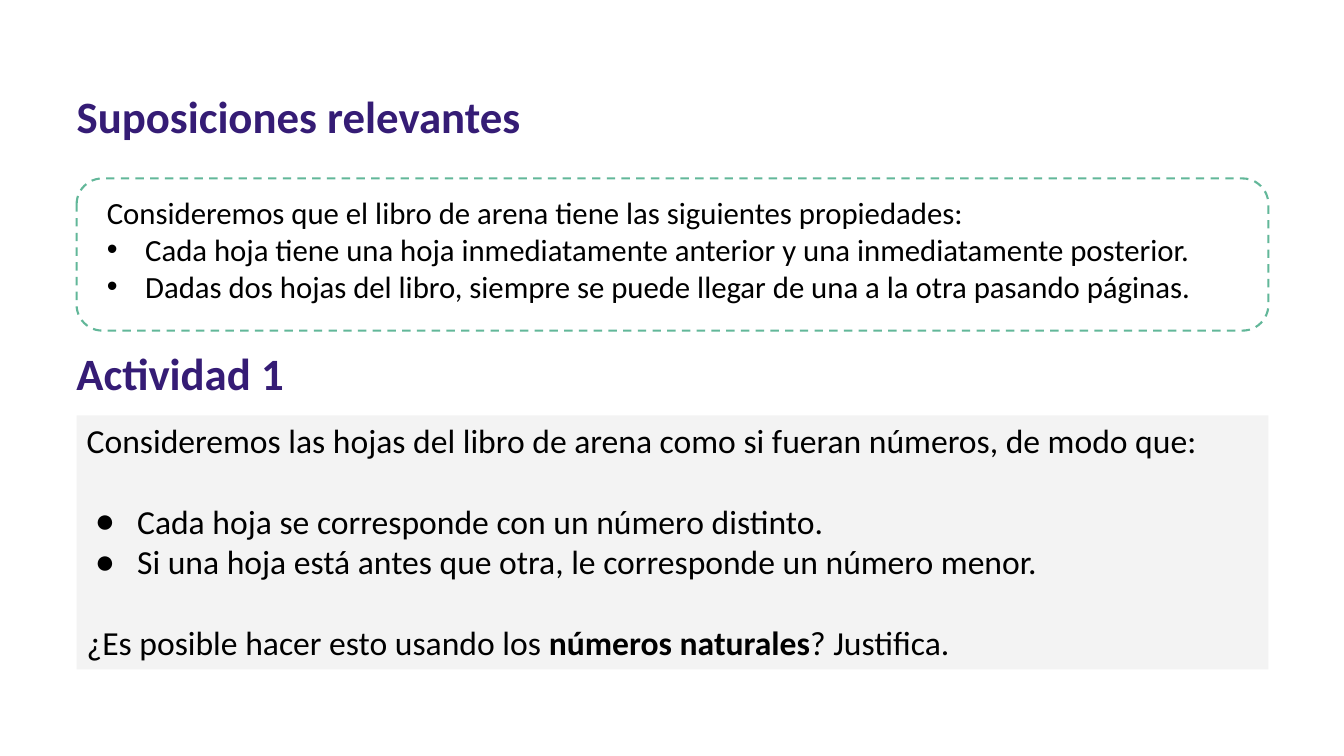
import pptx
import pptx.util
import pptx.dml.color
import pptx.enum.dml
import pptx.enum.shapes
import pptx.enum.text
import lxml.etree

Inches, Pt = pptx.util.Inches, pptx.util.Pt
ALIGN = pptx.enum.text.PP_ALIGN

COLORS = {"heading": "351C75", "text": "000000", "panel": "F3F3F3", "border": "62B799"}
FONT = "Calibri"
LEFT, WIDTH = 0.76, 11.82
HEADING_LEFT, HEADING_WIDTH, HEADING_HEIGHT = 0.66, 10.52, 0.64

HEADINGS = [("Suposiciones relevantes", 0.83), ("Actividad 1", 3.38)]

# Each paragraph: runs as (text, bold), is it a bullet, blank lines before, alignment
ASSUMPTIONS = [
    ([("Consideremos que el libro de arena tiene las siguientes propiedades:", False)], False, 0, ALIGN.LEFT),
    ([("Cada hoja tiene una hoja inmediatamente anterior y una inmediatamente posterior.", False)],
     True, 0, ALIGN.LEFT),
    ([("Dadas dos hojas del libro, siempre se puede llegar de una a la otra pasando páginas.", False)],
     True, 0, ALIGN.LEFT),
]
ACTIVITY = [
    ([("Consideremos las hojas del libro de arena como si fueran números, de modo que:", False)],
     False, 0, ALIGN.LEFT),
    ([("Cada hoja se corresponde con un número distinto.", False)], True, 1, ALIGN.LEFT),
    ([("Si una hoja está antes que otra, le corresponde un número menor.", False)], True, 0, ALIGN.LEFT),
    ([("¿Es posible hacer esto usando los ", False), ("números naturales", True), ("? Justifica.", False)],
     False, 1, ALIGN.JUSTIFY),
]


def rgb(name):
    return pptx.dml.color.RGBColor.from_string(COLORS[name])


def place(sp, left, top, width, height):
    sp.left, sp.top, sp.width, sp.height = map(Inches, (left, top, width, height))


def style_font(font, size, color, bold):
    font.name, font.size, font.bold = FONT, Pt(size), bold
    font.color.rgb = rgb(color)


def set_bullet(p, char, margin, hanging):
    """Give the paragraph this bullet, or none if char is empty."""
    pPr = p._p.get_or_add_pPr()
    pPr.set("marL", str(Inches(margin)))
    pPr.set("indent", str(-Inches(hanging)))
    ns = pptx.oxml.ns.qn
    if char:
        lxml.etree.SubElement(pPr, ns("a:buFont")).set("typeface", "Arial")
        lxml.etree.SubElement(pPr, ns("a:buChar")).set("char", char)
    else:
        lxml.etree.SubElement(pPr, ns("a:buNone"))


def prepare_frame(tf):
    tf.word_wrap = True
    tf.auto_size = pptx.enum.text.MSO_AUTO_SIZE.NONE
    tf.vertical_anchor = pptx.enum.text.MSO_ANCHOR.TOP


def add_heading(sp, text, top):
    place(sp, HEADING_LEFT, top, HEADING_WIDTH, HEADING_HEIGHT)
    tf = sp.text_frame
    prepare_frame(tf)
    tf.text = text
    p = tf.paragraphs[0]
    p.alignment = ALIGN.LEFT
    style_font(p.runs[0].font, 32, "heading", True)


def fill_list(tf, paragraphs, size, char, margin, hanging):
    prepare_frame(tf)
    for i, (runs, bulleted, blank_lines, alignment) in enumerate(paragraphs):
        p = tf.add_paragraph() if i else tf.paragraphs[0]
        if bulleted:
            set_bullet(p, char, margin, hanging)
        else:
            set_bullet(p, "", 0, 0)
        p.alignment = alignment
        p.space_before = Pt(blank_lines * size * 1.2)
        for text, bold in runs:
            r = p.add_run()
            r.text = text
            style_font(r.font, size, "text", bold)


def main():
    prs = pptx.Presentation()
    prs.slide_width, prs.slide_height = Inches(13.33), Inches(7.5)
    s = prs.slides.add_slide(prs.slide_layouts.get_by_name("Two Content"))
    title, assumptions, activity = list(s.placeholders)[:3]
    for sp in list(s.placeholders)[3:]:
        sp._element.getparent().remove(sp._element)

    second = s.shapes.add_textbox(0, 0, 0, 0)
    for sp, (text, top) in zip((title, second), HEADINGS):
        add_heading(sp, text, top)

    place(assumptions, LEFT + 0.2, 1.87, WIDTH, 1.3)
    fill_list(assumptions.text_frame, ASSUMPTIONS, 22, "•", 0.38, 0.38)

    place(activity, LEFT, 4.12, WIDTH, 2.52)
    activity.fill.solid()
    activity.fill.fore_color.rgb = rgb("panel")
    fill_list(activity.text_frame, ACTIVITY, 24, "●", 0.5, 0.42)

    frame = s.shapes.add_shape(pptx.enum.shapes.MSO_SHAPE.ROUNDED_RECTANGLE, 0, 0, 0, 0)
    place(frame, LEFT, 1.77, WIDTH, 1.51)
    frame.adjustments[0] = 0.17
    frame.shadow.inherit = False
    frame.fill.background()
    frame.line.color.rgb = rgb("border")
    frame.line.width = Pt(1.5)
    frame.line.dash_style = pptx.enum.dml.MSO_LINE.DASH

    prs.save("out.pptx")


if __name__ == "__main__":
    main()
